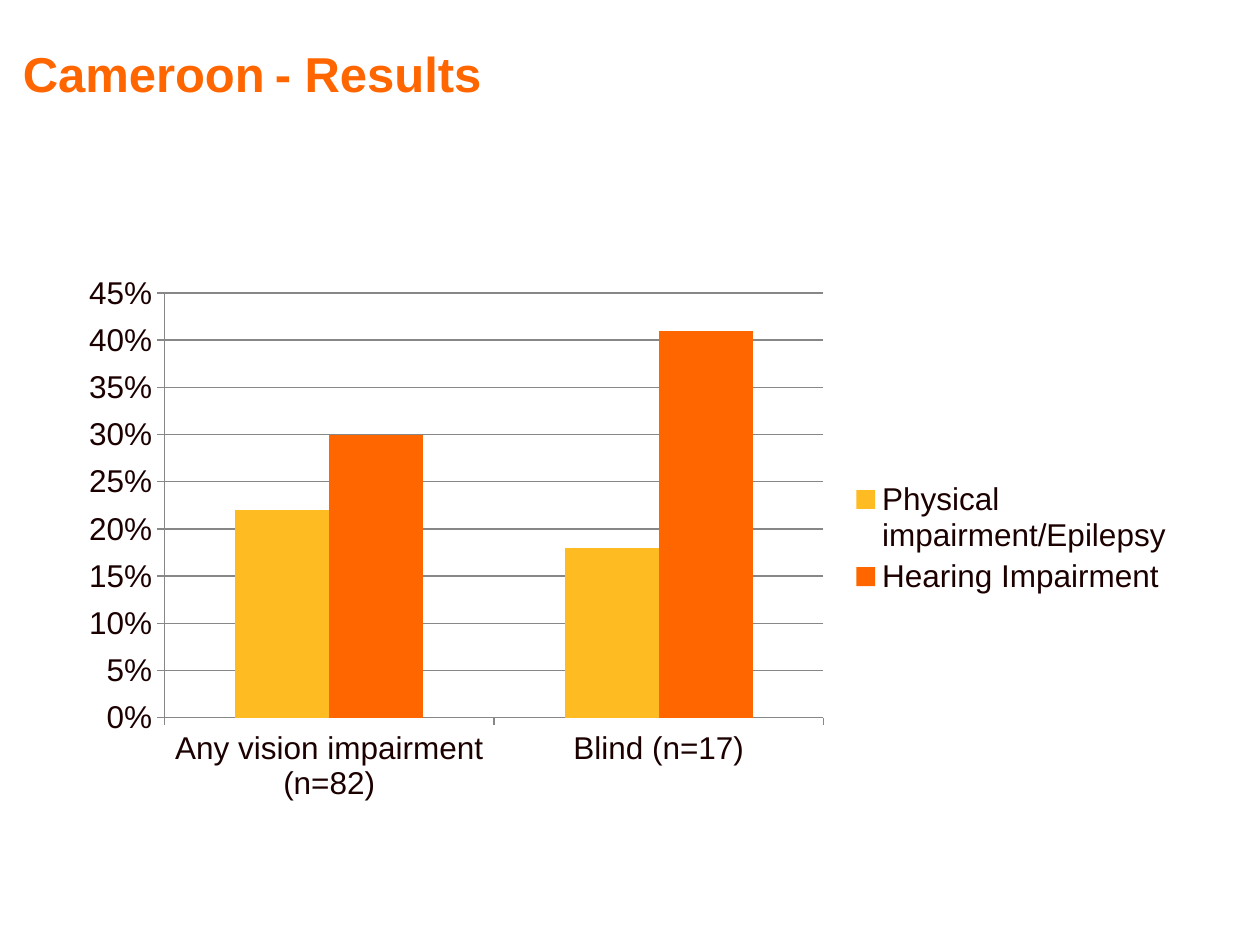
from pptx import Presentation
from pptx.chart.data import CategoryChartData
from pptx.dml.color import RGBColor
from pptx.enum.chart import XL_CHART_TYPE as ChartType
from pptx.enum.chart import XL_LEGEND_POSITION as LegendPosition
from pptx.enum.chart import XL_TICK_MARK as TickMark
from pptx.enum.text import MSO_ANCHOR as Anchor
from pptx.enum.text import PP_ALIGN as Align
from pptx.util import Pt

FONT = "Arial"
COLORS = {"orange": "FF6600", "amber": "FFBB22", "text": "1C0000", "line": "878787"}
CATEGORIES = ["Any vision impairment (n=82)", "Blind (n=17)"]
SERIES = [
    ("Physical impairment/Epilepsy ", (0.22, 0.18), "amber"),
    ("Hearing Impairment ", (0.3, 0.41), "orange"),
]


def color(name):
    return RGBColor.from_string(COLORS[name])


def style_font(font, size, color_name, bold=False):
    font.name = FONT
    font.size = Pt(size)
    font.bold = bold
    font.color.rgb = color(color_name)


def style_line(line):
    line.color.rgb = color("line")
    line.width = Pt(0.75)


def place_title(slide, left, top, width, height):
    title = slide.shapes.title
    title.left, title.top = Pt(left), Pt(top)
    title.width, title.height = Pt(width), Pt(height)
    frame = title.text_frame
    frame.margin_left = frame.margin_right = Pt(0)
    frame.margin_top = frame.margin_bottom = Pt(0)
    frame.word_wrap = True
    frame.vertical_anchor = Anchor.MIDDLE
    paragraph = frame.paragraphs[0]
    paragraph.alignment = Align.LEFT
    run = paragraph.add_run()
    run.text = "Cameroon\t- Results\t"
    style_font(run.font, 28, "orange", bold=True)


def place_chart(slide, left, top, width, height):
    data = CategoryChartData(number_format="0%")
    data.categories = CATEGORIES
    for name, values, _ in SERIES:
        data.add_series(name, values)
    chart = slide.shapes.add_chart(
        ChartType.COLUMN_CLUSTERED, Pt(left), Pt(top), Pt(width), Pt(height), data
    ).chart
    chart.has_title = False
    style_font(chart.font, 18, "text")

    plot = chart.plots[0]
    plot.vary_by_categories = False
    plot.gap_width = 150
    plot.overlap = 0
    for series, (_, _, color_name) in zip(plot.series, SERIES):
        series.format.fill.solid()
        series.format.fill.fore_color.rgb = color(color_name)

    for axis in (chart.category_axis, chart.value_axis):
        axis.major_tick_mark = TickMark.OUTSIDE
        axis.minor_tick_mark = TickMark.NONE
        axis.tick_labels.number_format = "0%"
        axis.tick_labels.number_format_is_linked = False
        style_line(axis.format.line)
    value_axis = chart.value_axis
    value_axis.minimum_scale = 0
    value_axis.maximum_scale = 0.45
    value_axis.major_unit = 0.05
    value_axis.has_major_gridlines = True
    style_line(value_axis.major_gridlines.format.line)

    chart.has_legend = True
    chart.legend.position = LegendPosition.RIGHT
    chart.legend.include_in_layout = False


def main():
    presentation = Presentation()
    presentation.slide_width = Pt(720)
    presentation.slide_height = Pt(540)
    slide = presentation.slides.add_slide(presentation.slide_layouts[5])
    place_title(slide, 13, 23, 472, 37.5)
    place_chart(slide, 38, 151, 644, 313)
    presentation.save("out.pptx")


if __name__ == "__main__":
    main()
